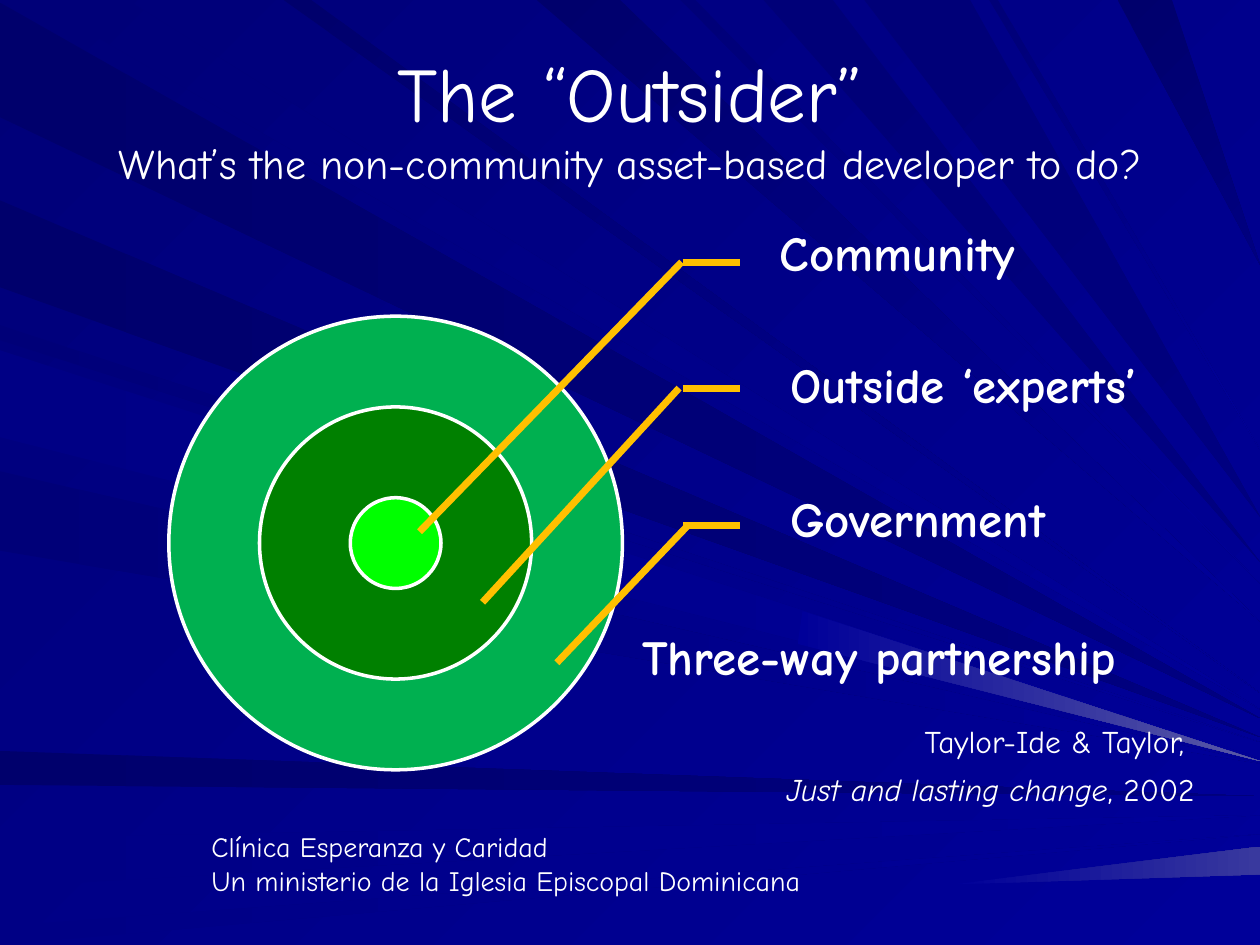
"""Build the "Outsider" slide: three nested circles with callouts on a ray-patterned background."""
from lxml import etree
from pptx import Presentation
from pptx.dml.color import RGBColor
from pptx.enum.shapes import MSO_CONNECTOR, MSO_SHAPE
from pptx.enum.text import MSO_ANCHOR, PP_ALIGN
from pptx.oxml.ns import qn
from pptx.util import Pt

PX = 9144
WIDTH, HEIGHT = 1000, 750
FONT = "Comic Neue"
STRAIGHT, OVAL = MSO_CONNECTOR.STRAIGHT, MSO_SHAPE.OVAL
TOP, MIDDLE, BOTTOM = MSO_ANCHOR.TOP, MSO_ANCHOR.MIDDLE, MSO_ANCHOR.BOTTOM
LEFT, CENTER, RIGHT = PP_ALIGN.LEFT, PP_ALIGN.CENTER, PP_ALIGN.RIGHT

WHITE = RGBColor.from_string("FFFFFF")
AMBER = RGBColor.from_string("FFC000")
GREEN = RGBColor.from_string("00B050")
DARK_GREEN = RGBColor.from_string("008000")
LIME = RGBColor.from_string("00FF00")
INK = RGBColor.from_string("00006C")
NIGHT = RGBColor.from_string("000078")
NAVY = RGBColor.from_string("000080")
ROYAL = RGBColor.from_string("000085")
BLUE = RGBColor.from_string("000099")
HAZE = RGBColor.from_string("39399E")
GLOW = RGBColor.from_string("5A5AA6")

# Each ray runs from a stretch of the left or top edge to a height on the right edge.
LEFT_RAYS = [
    (2, 93, 570, INK, NAVY),
    (596, 623, 632, INK, NAVY),
    (665, 704, 647, ROYAL, BLUE),
    (735, 750, 662, ROYAL, BLUE),
    (258, 270, 589, NIGHT, BLUE),
    (159, 228, 585, INK, NAVY),
    (374, 437, 606, NIGHT, BLUE),
    (278, 347, 602, ROYAL, BLUE),
]
TOP_RAYS = [
    (26, 101, 563, NIGHT, BLUE),
    (426, 492, 493, INK, BLUE),
    (540, 552, 463, NIGHT, BLUE),
    (606, 661, 446, NIGHT, NAVY),
    (887, 930, 210, INK, NAVY),
    (225, 247, 550, INK, BLUE),
    (686, 770, 410, NIGHT, NAVY),
    (785, 792, 357, NIGHT, BLUE),
]
GLINTS = [
    ([(756, 702), (WIDTH, 694), (WIDTH, 672)], HAZE),
    ([(637, 485), (633, 511), (WIDTH, 604)], GLOW),
]

RING_CENTER = (314, 431)
CORE = 72
RINGS = [(5, GREEN), (3, DARK_GREEN), (1, LIME)]

TICK = (542, 587)
LABEL_SIZE = (315, 106)
CALLOUTS = [
    ("Community", (597, 150), 208, 541, (333, 422)),
    ("Outside ‘experts’", (605, 255), 308, 539, (383, 478)),
    ("Government", (605, 361), 417, 546, (442, 526)),
]

# Paragraphs are (alignment, space before, size, runs); runs are (text, bold, italic).
TITLE = [(CENTER, 0, 44, [("The “Outsider”", False, False)]),
         (CENTER, 0, 24, [("What’s the non-community asset-based developer to do?", False, False)])]
CLINIC = [(LEFT, 0, 16, [("Clínica Esperanza y Caridad", False, False)]),
          (LEFT, 0, 16, [("Un ministerio de la Iglesia Episcopal Dominicana", False, False)])]
PARTNERSHIP = [(LEFT, 0, 28, [("Three-way partnership", True, False)]),
               (RIGHT, 21, 18, [("Taylor-Ide & Taylor, ", False, False)]),
               (RIGHT, 6, 18, [("Just and lasting change", False, True), (", 2002", False, False)])]


def paint_gradient(fill, start, end, angle):
    fill.gradient()
    fill.gradient_angle = (360 - angle) % 360
    for stop, color in zip(fill.gradient_stops, (start, end)):
        stop.color.rgb = color


def add_ray(slide, corners, start, end, angle):
    outline = slide.shapes.build_freeform(*corners[0], scale=PX)
    outline.add_line_segments(corners[1:], close=True)
    ray = outline.convert_to_shape()
    ray.shadow.inherit = False
    ray.line.fill.background()
    paint_gradient(ray.fill, start, end, angle)


def add_background(slide):
    paint_gradient(slide.background.fill, NIGHT, BLUE, 45)
    for near, far, tip, start, end in LEFT_RAYS:
        add_ray(slide, [(0, near), (0, far), (WIDTH, tip)], start, end, 0)
    for near, far, tip, start, end in TOP_RAYS:
        add_ray(slide, [(near, 0), (far, 0), (WIDTH, tip)], start, end, 45)
    for corners, shine in GLINTS:
        add_ray(slide, corners, BLUE, shine, 0)


def add_ring(slide, multiple, color):
    diameter = CORE * multiple
    left, top = (middle - diameter // 2 for middle in RING_CENTER)
    ring = slide.shapes.add_shape(OVAL, *(v * PX for v in (left, top, diameter, diameter)))
    ring.shadow.inherit = False
    ring.fill.solid()
    ring.fill.fore_color.rgb = color
    ring.line.color.rgb = WHITE
    ring.line.width = Pt(2)


def add_leader(slide, start, end):
    leader = slide.shapes.add_connector(STRAIGHT, *(v * PX for v in start + end))
    leader.line.color.rgb = AMBER
    leader.line.width = Pt(4)
    etree.SubElement(leader._element.spPr, qn("a:effectLst"))


def add_text(slide, box, paragraphs, anchor, margins=(10, 5, 10, 5), spacing=None):
    frame = slide.shapes.add_textbox(*(v * PX for v in box)).text_frame
    frame.word_wrap = True
    frame.vertical_anchor = anchor
    frame.margin_left, frame.margin_top, frame.margin_right, frame.margin_bottom = (
        m * PX for m in margins)
    for index, (alignment, before, size, runs) in enumerate(paragraphs):
        paragraph = frame.add_paragraph() if index else frame.paragraphs[0]
        paragraph.alignment = alignment
        paragraph.line_spacing = spacing
        if before:
            paragraph.space_before = Pt(before)
        for words, bold, italic in runs:
            run = paragraph.add_run()
            run.text = words
            run.font.name = FONT
            run.font.size = Pt(size)
            run.font.bold = bold
            run.font.italic = italic
            run.font.color.rgb = WHITE


def main():
    deck = Presentation()
    deck.slide_width, deck.slide_height = WIDTH * PX, HEIGHT * PX
    slide = deck.slides.add_slide(deck.slide_layouts[6])
    add_background(slide)
    add_text(slide, (50, 30, 900, 125), TITLE, MIDDLE)
    for ring in RINGS:
        add_ring(slide, *ring)
    for label, corner, level, bend, target in CALLOUTS:
        add_text(slide, corner + LABEL_SIZE, [(LEFT, 0, 28, [(label, True, False)])],
                 MIDDLE, (22, 4, 4, 4), 0.9)
        add_leader(slide, (TICK[0], level), (TICK[1], level))
        add_leader(slide, (bend, level), target)
    add_text(slide, (158, 650, 758, 67), CLINIC, BOTTOM)
    add_text(slide, (500, 492, 458, 157), PARTNERSHIP, TOP)
    deck.save("out.pptx")


if __name__ == "__main__":
    main()
